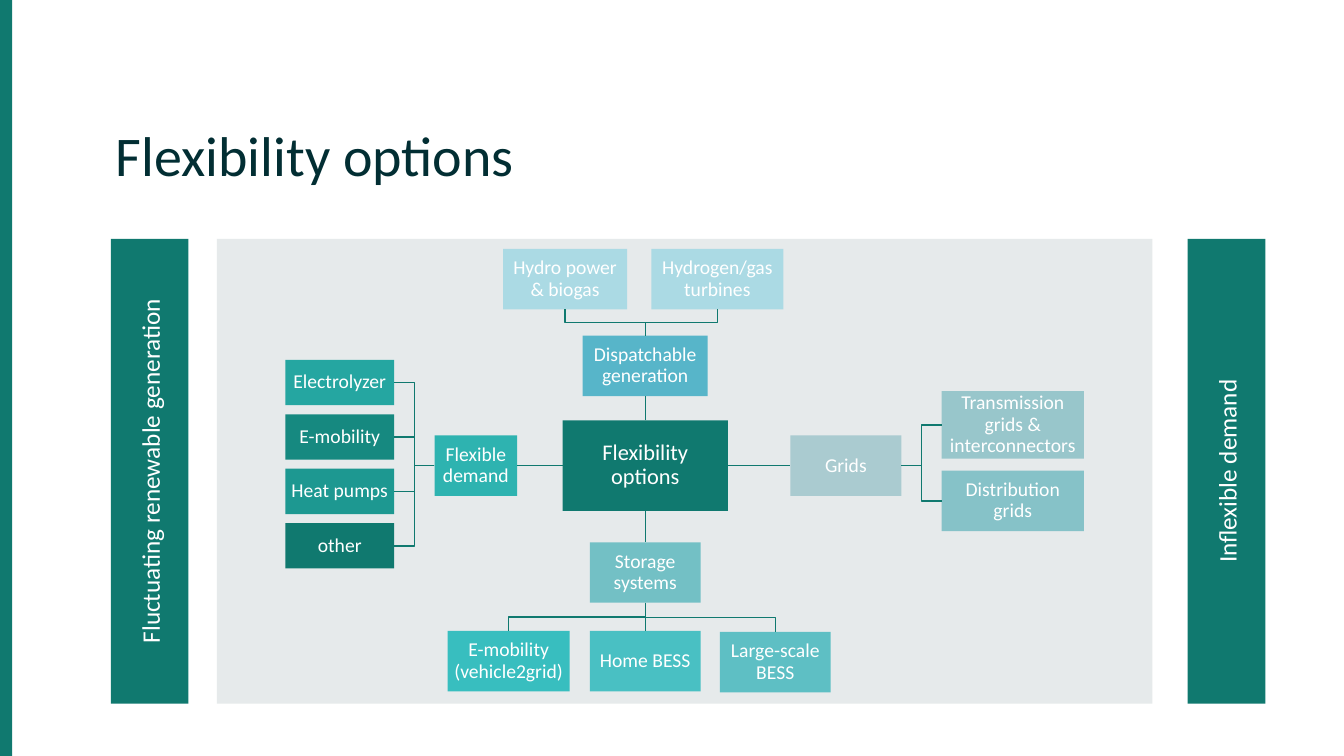
from lxml import etree
from pptx import Presentation
from pptx import util as u
from pptx.dml.color import RGBColor
from pptx.enum import shapes, text
from pptx.oxml import ns

EMU_PER_PX = 9144  # 100 px to the inch
TOP, LEFT, BOTTOM, RIGHT = range(4)
C = {
    "green": "10796F", "panel": "E6EAEB", "title": "022E33", "white": "FFFFFF",
    "dispatch": "57B5C9", "turbine": "ABDAE4",
    "grids": "AACBD0", "transmission": "98C6CB", "distribution": "86C2C8",
    "storage": "73C0C5", "large": "5EBFC4", "home": "49C0C3", "vehicle": "38BEBF",
    "demand": "2EB3B0", "electrolyzer": "25A6A1", "heat": "1D9891", "mobility": "168980",
}


def px(n):
    return u.Emu(round(n * EMU_PER_PX))


def rgb(name):
    return RGBColor.from_string(C[name])


def write(tf, words, size=14, color="white", align=text.PP_ALIGN.CENTER,
          anchor=text.MSO_ANCHOR.MIDDLE, spacing=None, before=None, inset=None):
    tf.word_wrap = True
    tf.auto_size = text.MSO_AUTO_SIZE.NONE
    tf.vertical_anchor = anchor
    if inset is not None:
        tf.margin_left = tf.margin_right = tf.margin_top = tf.margin_bottom = px(inset)
    p = tf.paragraphs[0]
    p.alignment, p.line_spacing, p.space_before = align, spacing, before
    r = p.add_run()
    r.text = words
    r.font.name, r.font.size = "Calibri", u.Pt(size)
    r.font.color.rgb = rgb(color)


def side_point(sp, side):
    """Middle of one side of a shape, in EMU."""
    dx, dy = {TOP: (1, 0), LEFT: (0, 1), BOTTOM: (1, 2), RIGHT: (2, 1)}[side]
    return sp.left + sp.width * dx // 2, sp.top + sp.height * dy // 2


class Diagram:
    def __init__(self, s, line="green"):
        self.s, self.line = s, line

    def title(self, words, x, y, w, h):
        sp = self.s.shapes.title
        sp.left, sp.top, sp.width, sp.height = map(px, (x, y, w, h))
        write(sp.text_frame, words, size=40, color="title", align=text.PP_ALIGN.LEFT,
              anchor=text.MSO_ANCHOR.BOTTOM, spacing=u.Pt(38), before=u.Pt(0))

    def rect(self, x, y, w, h, fill):
        sp = self.s.shapes.add_shape(shapes.MSO_SHAPE.RECTANGLE, *map(px, (x, y, w, h)))
        sp.shadow.inherit = False
        sp.fill.solid()
        sp.fill.fore_color.rgb = rgb(fill)
        sp.line.fill.background()
        return sp

    def box(self, words, x, y, w, h, fill, size=14, inset=4):
        sp = self.rect(x, y, w, h, fill)
        write(sp.text_frame, words, size=size, spacing=0.9, inset=inset)
        return sp

    def pillar(self, words, x, y, w, h):
        """Tall bar whose text reads upwards."""
        sp = self.rect(x, y, w, h, "green")
        write(sp.text_frame, words, size=18)
        sp.text_frame._txBody.bodyPr.set("vert", "vert270")

    def connector(self, kind, *ends):
        c = self.s.shapes.add_connector(kind, *map(u.Emu, ends))
        c.line.color.rgb = rgb(self.line)
        c.line.width = u.Pt(1)
        etree.SubElement(c._element.spPr, ns.qn("a:effectLst"))
        return c

    def straight(self, start, side, end):
        far = (side + 2) % 4
        c = self.connector(shapes.MSO_CONNECTOR.STRAIGHT,
                           *side_point(start, side), *side_point(end, far))
        c.begin_connect(start, side)
        c.end_connect(end, far)

    def elbow(self, start, side, end):
        x1, y1 = side_point(start, side)
        x2, y2 = side_point(end, (side + 2) % 4)
        if side in (LEFT, RIGHT):
            self.connector(shapes.MSO_CONNECTOR.ELBOW, x1, y1, x2, y2)
            return
        # An elbow leaves sideways, so a vertical one is laid flat and turned by 90 degrees
        cx, cy, dx, dy = (x1 + x2) // 2, (y1 + y2) // 2, x2 - x1, y2 - y1
        c = self.connector(shapes.MSO_CONNECTOR.ELBOW, cx - dy // 2, cy + dx // 2,
                           cx + dy // 2, cy - dx // 2)
        c._element.spPr.find(ns.qn("a:xfrm")).set("rot", str(90 * 60000))

    def branch(self, hub, side, parent, children):
        """Join a parent box to the hub and its children to the parent."""
        self.straight(hub, side, parent)
        for child in children:
            aligned = side_point(child, TOP)[0] == side_point(parent, TOP)[0]
            (self.straight if aligned else self.elbow)(parent, side, child)


def main():
    prs = Presentation()
    prs.slide_width, prs.slide_height = px(1333), px(750)
    d = Diagram(prs.slides.add_slide(prs.slide_layouts[5]))

    d.rect(0, 0, 12, 750, "green")
    d.title("Flexibility options", 105, 55, 674, 136)
    d.rect(215, 237, 928, 461, "panel")
    d.pillar("Fluctuating renewable generation", 110, 237, 77, 461)
    d.pillar("Inflexible demand", 1178, 237, 77, 461)
    hub = d.box("Flexibility options", 558, 417, 164, 90, "green", size=16, inset=8)

    dispatch = d.box("Dispatchable generation", 578, 333, 124, 60, "dispatch", inset=5)
    d.branch(hub, TOP, dispatch, [
        d.box("Hydro power & biogas", 499, 247, 123, 60, "turbine"),
        d.box("Hydrogen/gas turbines", 646, 247, 131, 60, "turbine"),
    ])

    grids = d.box("Grids", 784, 432, 110, 60, "grids", inset=5)
    d.branch(hub, RIGHT, grids, [
        d.box("Transmission grids & interconnectors", 934, 388, 141, 67, "transmission"),
        d.box("Distribution grids", 934, 467, 141, 60, "distribution"),
    ])

    storage = d.box("Storage systems", 585, 538, 110, 60, "storage", inset=5)
    d.branch(hub, BOTTOM, storage, [
        d.box("E-mobility (vehicle2grid)", 444, 626, 121, 60, "vehicle"),
        d.box("Home BESS", 585, 626, 110, 60, "home"),
        d.box("Large-scale BESS", 714, 627, 110, 60, "large"),
    ])

    demand = d.box("Flexible demand", 431, 432, 82, 60, "demand")
    consumers = [("Electrolyzer", "electrolyzer"), ("E-mobility", "mobility"),
                 ("Heat pumps", "heat"), ("other", "green")]
    d.branch(hub, LEFT, demand, [
        d.box(words, 283, 357 + 54 * i, 108, 45, fill)
        for i, (words, fill) in enumerate(consumers)
    ])

    prs.save("out.pptx")


if __name__ == "__main__":
    main()
